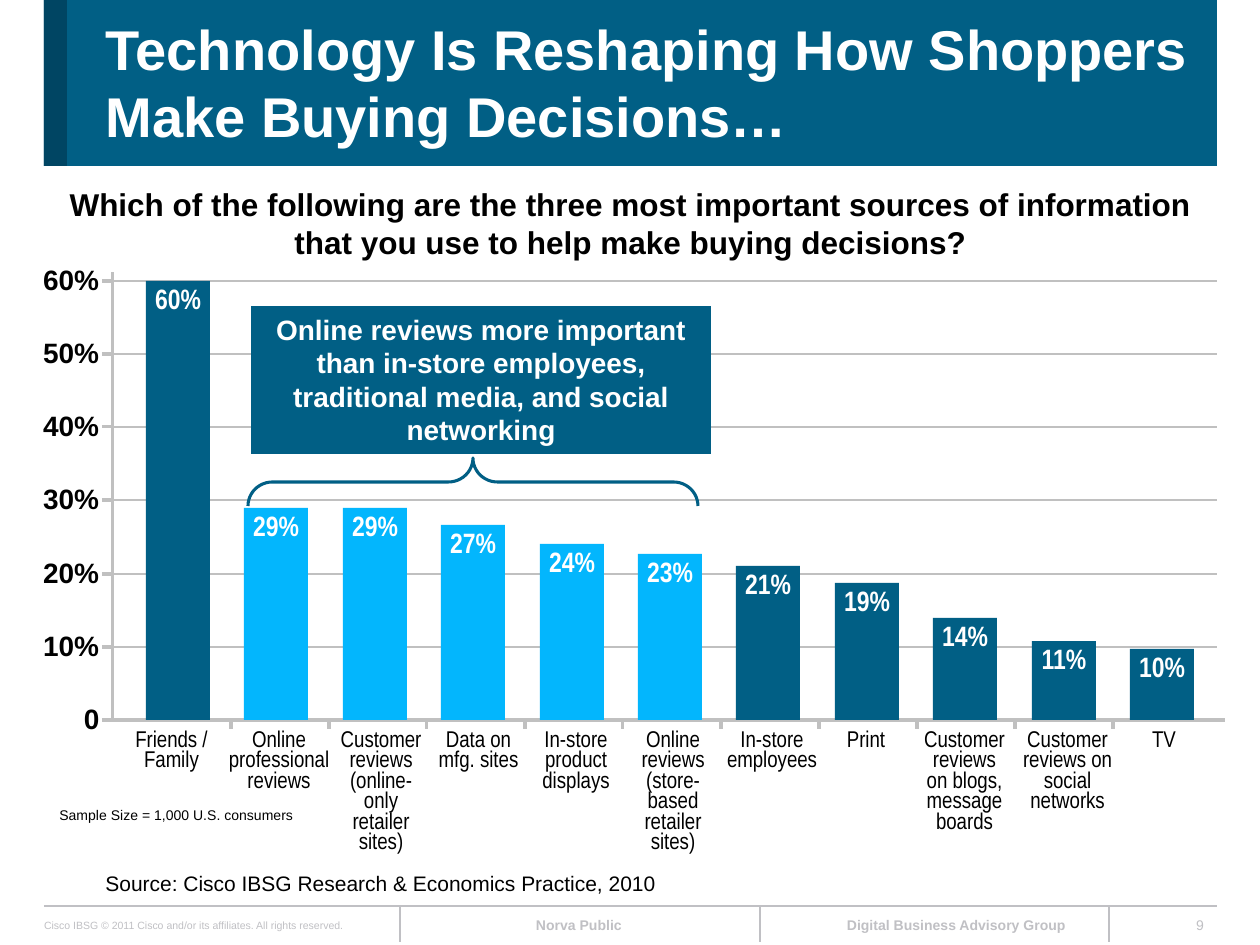
from dataclasses import dataclass

from lxml import etree
from pptx import Presentation
from pptx.dml.color import RGBColor
from pptx.enum.shapes import MSO_CONNECTOR, MSO_SHAPE
from pptx.enum.text import MSO_ANCHOR, MSO_AUTO_SIZE, PP_ALIGN
from pptx.oxml.ns import qn
from pptx.util import Emu, Pt

RECTANGLE, BRACE = MSO_SHAPE.RECTANGLE, MSO_SHAPE.RIGHT_BRACE
STRAIGHT = MSO_CONNECTOR.STRAIGHT
LEFT, CENTER, RIGHT = PP_ALIGN.LEFT, PP_ALIGN.CENTER, PP_ALIGN.RIGHT
TOP, MIDDLE = MSO_ANCHOR.TOP, MSO_ANCHOR.MIDDLE
FIXED, GROW = MSO_AUTO_SIZE.NONE, MSO_AUTO_SIZE.SHAPE_TO_FIT_TEXT

EMU_PER_PX = 914400 / 126
BLUE, NAVY, SKY = "015F85", "004563", "03B6FD"
WHITE, BLACK, AXIS_GRAY, FOOTER_GRAY = "FFFFFF", "000000", "C0C0C0", "C0C0C4"

BASELINE = 720
PX_PER_PERCENT = 7.32
FIRST_BAR, BAR_STEP, BAR_WIDTH = 146, 98.4, 64
FIRST_TICK, TICK_STEP, TICK_COUNT = 231, 98, 10
LABEL_LINE = 21


@dataclass
class Style:
    size: int
    color: str = BLACK
    bold: bool = False
    font: str = "Arial"
    align: PP_ALIGN = LEFT
    anchor: MSO_ANCHOR = TOP
    spacing: float | None = None
    inset: bool = False
    wrap: bool = True


@dataclass
class Bar:
    share: float
    color: str
    name: str
    name_left: int
    name_width: int
    name_lines: int


@dataclass
class Note:
    text: str
    box: tuple[int, int, int, int]
    style: Style


BARS = [
    Bar(60, BLUE, "Friends / Family", 114, 115, 2),
    Bar(29, SKY, "Online professional reviews", 226, 106, 3),
    Bar(29, SKY, "Customer reviews (online- only retailer sites)", 335, 92, 6),
    Bar(26.6, SKY, "Data on mfg. sites", 430, 97, 2),
    Bar(24, SKY, "In-store product displays", 522, 108, 3),
    Bar(22.7, SKY, "Online reviews (store-based retailer sites)", 625, 96, 6),
    Bar(21, BLUE, "In-store employees", 707, 130, 2),
    Bar(18.7, BLUE, "Print", 801, 130, 1),
    Bar(14, BLUE, "Customer reviews on blogs, message boards", 921, 87, 5),
    Bar(10.8, BLUE, "Customer reviews on social networks", 1009, 117, 4),
    Bar(9.7, BLUE, "TV", 1099, 130, 1),
]

TITLE = Style(32, WHITE, True, anchor=MIDDLE, inset=True)
QUESTION = Style(18, bold=True, align=CENTER, inset=True)
CALLOUT = Style(16, WHITE, True, align=CENTER, inset=True)
SCALE_LABEL = Style(16, bold=True, align=RIGHT, spacing=0.9, wrap=False)
VALUE_LABEL = Style(16, WHITE, True, "Arial Narrow", CENTER, spacing=0.9, wrap=False)
NAME_LABEL = Style(13, font="Arial Narrow", align=CENTER, spacing=0.75)
FOOTER_BOLD = Style(8, FOOTER_GRAY, True, align=CENTER, anchor=MIDDLE)

NOTES = [
    Note("Sample Size = 1,000 U.S. consumers", (47, 800, 265, 29), Style(8, inset=True)),
    Note("Source: Cisco IBSG Research & Economics Practice, 2010", (93, 864, 929, 38),
         Style(12, inset=True)),
    Note("Cisco IBSG © 2011 Cisco and/or its affiliates. All rights reserved.",
         (44, 919, 335, 13), Style(6, FOOTER_GRAY, anchor=MIDDLE)),
    Note("Norva Public", (416, 917, 326, 16), FOOTER_BOLD),
    Note("Digital Business Advisory Group", (808, 916, 297, 18), FOOTER_BOLD),
    Note("9", (1131, 911, 73, 28),
         Style(8, FOOTER_GRAY, align=RIGHT, anchor=MIDDLE, wrap=False)),
]


def px(length: float) -> Emu:
    return Emu(round(length * EMU_PER_PX))


def rgb(color: str) -> RGBColor:
    return RGBColor.from_string(color)


def write(shape, text: str, style: Style, auto_size=GROW) -> None:
    frame = shape.text_frame
    frame.text = text
    frame.word_wrap = style.wrap
    frame.auto_size = auto_size
    frame.vertical_anchor = style.anchor
    if not style.inset:
        frame.margin_left = frame.margin_right = 0
        frame.margin_top = frame.margin_bottom = 0
    para = frame.paragraphs[0]
    para.alignment = style.align
    if style.spacing:
        para.line_spacing = style.spacing
    font = para.runs[0].font
    font.name, font.size, font.bold = style.font, Pt(style.size), style.bold
    font.color.rgb = rgb(style.color)


def add_text(page, text: str, box: tuple, style: Style) -> None:
    write(page.shapes.add_textbox(*map(px, box)), text, style)


def add_rectangle(page, box: tuple, color: str):
    shape = page.shapes.add_shape(RECTANGLE, *map(px, box))
    shape.shadow.inherit = False
    shape.fill.solid()
    shape.fill.fore_color.rgb = rgb(color)
    shape.line.fill.background()
    return shape


def add_line(page, start: tuple, end: tuple, color: str, width: float) -> None:
    line = page.shapes.add_connector(STRAIGHT, *map(px, start + end))
    line.line.color.rgb = rgb(color)
    line.line.width = Pt(width)
    etree.SubElement(line.element.spPr, qn("a:effectLst"))


def draw_header(page) -> None:
    title = page.shapes.title
    title.left, title.top, title.width, title.height = map(px, (93, 3, 1120, 158))
    write(title, "Technology Is Reshaping How Shoppers Make Buying Decisions…", TITLE, FIXED)
    for box, color in (((44, -1, 1173, 167), BLUE), ((44, -1, 23, 167), NAVY)):
        title.element.addprevious(add_rectangle(page, box, color).element)
    question = add_rectangle(page, (44, 179, 1173, 89), WHITE)
    write(question, "Which of the following are the three most important sources of "
          "information that you use to help make buying decisions?", QUESTION)


def draw_axes(page) -> None:
    for percent in range(0, 70, 10):
        y = round(BASELINE - percent * PX_PER_PERCENT)
        width = 57 if percent else 15
        add_text(page, f"{percent}%" if percent else "0",
                 (99 - width, y - 15, width, 30), SCALE_LABEL)
        if percent:
            add_line(page, (113, y), (1217, y), AXIS_GRAY, 0.63)
            add_line(page, (102, y), (114, y), AXIS_GRAY, 1.75)
    add_line(page, (102, BASELINE), (1225, BASELINE), AXIS_GRAY, 1.75)
    add_line(page, (113, BASELINE), (113, 272), AXIS_GRAY, 1.75)
    for index in range(TICK_COUNT):
        x = FIRST_TICK + index * TICK_STEP
        add_line(page, (x, BASELINE + 9), (x, BASELINE), AXIS_GRAY, 1.75)


def draw_bars(page) -> None:
    for index, bar in enumerate(BARS):
        left = round(FIRST_BAR + index * BAR_STEP)
        height = round(bar.share * PX_PER_PERCENT)
        top = BASELINE - height
        add_rectangle(page, (left, top, BAR_WIDTH, height), bar.color)
        add_text(page, f"{bar.share:.0f}%", (left + 9, top + 4, 46, 30), VALUE_LABEL)
        add_text(page, bar.name, (bar.name_left, 731, bar.name_width,
                                  bar.name_lines * LABEL_LINE), NAME_LABEL)


def draw_callout(page) -> None:
    brace = page.shapes.add_shape(BRACE, *map(px, (449, 257, 48, 450)))
    brace.rotation = 270
    brace.adjustments[0], brace.adjustments[1] = 0.51, 0.5
    brace.shadow.inherit = False
    brace.fill.background()
    brace.line.color.rgb = rgb(BLUE)
    brace.line.width = Pt(1.75)
    callout = add_rectangle(page, (251, 306, 460, 148), BLUE)
    write(callout, "Online reviews more important than in-store employees, "
          "traditional media, and social networking", CALLOUT)


def draw_footer(page) -> None:
    add_line(page, (44, 906), (1217, 906), FOOTER_GRAY, 1)
    for x in (400, 760, 1109):
        add_line(page, (x, 906), (x, 942), FOOTER_GRAY, 1)
    for note in NOTES:
        add_text(page, note.text, note.box, note.style)


def main() -> None:
    deck = Presentation()
    deck.slide_width, deck.slide_height = px(1260), px(945)
    page = deck.slides.add_slide(deck.slide_layouts[5])
    for draw in (draw_header, draw_axes, draw_bars, draw_callout, draw_footer):
        draw(page)
    deck.save("out.pptx")


if __name__ == "__main__":
    main()
